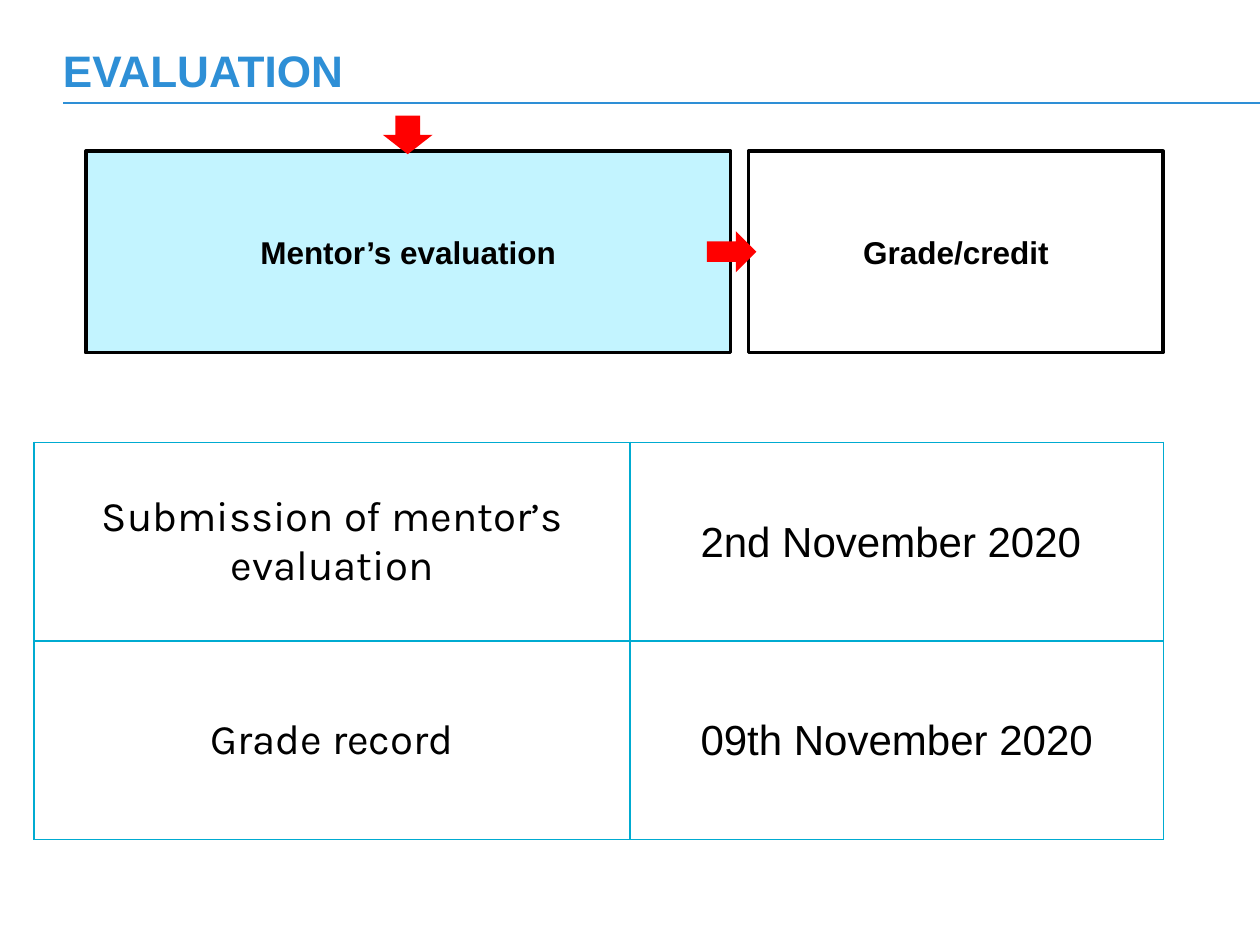
from typing import NamedTuple

import pptx
import pptx.dml.color
import pptx.enum.shapes
import pptx.enum.text
import pptx.oxml
import pptx.oxml.ns
import pptx.util
from lxml import etree

Cm = pptx.util.Cm
Pt = pptx.util.Pt
RGBColor = pptx.dml.color.RGBColor
MSO_SHAPE = pptx.enum.shapes.MSO_SHAPE
PP_ALIGN = pptx.enum.text.PP_ALIGN
MSO_ANCHOR = pptx.enum.text.MSO_ANCHOR
qn = pptx.oxml.ns.qn

BLUE = RGBColor(0x2E, 0x8F, 0xD6)
PALE_CYAN = RGBColor(0xC3, 0xF4, 0xFF)
TEAL = RGBColor(0x00, 0xAB, 0xD1)
RED = RGBColor(0xFF, 0x00, 0x00)
BLACK = RGBColor(0x00, 0x00, 0x00)
WHITE = RGBColor(0xFF, 0xFF, 0xFF)


class Step(NamedTuple):
    text: str
    left: float
    width: float
    fill: RGBColor


class Arrow(NamedTuple):
    kind: MSO_SHAPE
    left: float
    top: float
    width: float
    height: float


STEP_TOP, STEP_HEIGHT = 3.05, 4.06
STEPS = [
    Step("Mentor’s evaluation", 1.73, 13.0, PALE_CYAN),
    Step("Grade/credit", 15.09, 8.36, WHITE),
]
ARROWS = [
    Arrow(MSO_SHAPE.RIGHT_ARROW, 14.25, 4.66, 1.0, 0.83),
    Arrow(MSO_SHAPE.DOWN_ARROW, 7.72, 2.33, 1.0, 0.78),
]
TABLE_LEFT, TABLE_TOP, ROW_HEIGHT = 0.69, 8.92, 4.0
COLUMN_WIDTHS = [12.01, 10.75]
COLUMN_FONTS = ["Karla", "Arial"]
# The trailing space keeps both dates starting at the same place.
DEADLINES = [
    ("Submission of mentor’s evaluation", "2nd November 2020 "),
    ("Grade record", "09th November 2020"),
]


def write(tf, text: str, size: float, font: str, color: RGBColor,
          bold: bool = False, align: PP_ALIGN = PP_ALIGN.CENTER) -> None:
    tf.text = text
    tf.word_wrap = True
    p = tf.paragraphs[0]
    p.alignment = align
    r = p.runs[0]
    r.font.size = Pt(size)
    r.font.name = font
    r.font.bold = bold
    r.font.color.rgb = color


def add_title(s, text: str) -> None:
    left = Cm(1.27)
    rule = s.shapes.add_connector(
        pptx.enum.shapes.MSO_CONNECTOR.STRAIGHT, left, Cm(2.08), Cm(25.4), Cm(2.08))
    rule.line.color.rgb = BLUE
    rule.line.width = Pt(1.5)
    etree.SubElement(rule._element.spPr, qn("a:effectLst"))

    sp = s.shapes.add_textbox(left, Cm(1.02), Cm(22.86), Cm(0.79))
    tf = sp.text_frame
    tf.margin_left = tf.margin_top = tf.margin_right = tf.margin_bottom = 0
    tf.vertical_anchor = MSO_ANCHOR.MIDDLE
    write(tf, text, 25.2, "Arial", BLUE, bold=True, align=PP_ALIGN.LEFT)


def add_step(s, step: Step) -> None:
    sp = s.shapes.add_shape(MSO_SHAPE.RECTANGLE, Cm(step.left), Cm(STEP_TOP),
                            Cm(step.width), Cm(STEP_HEIGHT))
    sp.shadow.inherit = False
    sp.fill.solid()
    sp.fill.fore_color.rgb = step.fill
    sp.line.color.rgb = BLACK
    sp.line.width = Pt(2)
    sp.text_frame.vertical_anchor = MSO_ANCHOR.MIDDLE
    write(sp.text_frame, step.text, 18, "Arial", BLACK, bold=True)


def add_arrow(s, arrow: Arrow) -> None:
    sp = s.shapes.add_shape(arrow.kind, Cm(arrow.left), Cm(arrow.top),
                            Cm(arrow.width), Cm(arrow.height))
    sp.shadow.inherit = False
    sp.fill.solid()
    sp.fill.fore_color.rgb = RED
    sp.line.fill.background()


def set_borders(cell, color: RGBColor, width: float) -> None:
    """Line all four sides; border elements must precede the cell's fill."""
    tcPr = cell._tc.get_or_add_tcPr()
    for i, side in enumerate(("a:lnL", "a:lnR", "a:lnT", "a:lnB")):
        ln = etree.Element(qn(side), w=str(Pt(width)))
        fill = etree.SubElement(ln, qn("a:solidFill"))
        etree.SubElement(fill, qn("a:srgbClr"), val=str(color))
        tcPr.insert(i, ln)


def add_deadlines(s) -> None:
    table = s.shapes.add_table(
        len(DEADLINES), len(COLUMN_WIDTHS), Cm(TABLE_LEFT), Cm(TABLE_TOP),
        Cm(sum(COLUMN_WIDTHS)), Cm(ROW_HEIGHT * len(DEADLINES))).table
    table.first_row = table.horz_banding = False
    for column, width in zip(table.columns, COLUMN_WIDTHS):
        column.width = Cm(width)
    for i, texts in enumerate(DEADLINES):
        table.rows[i].height = Cm(ROW_HEIGHT)
        for j, (text, font) in enumerate(zip(texts, COLUMN_FONTS)):
            cell = table.cell(i, j)
            cell.fill.solid()
            cell.fill.fore_color.rgb = WHITE
            cell.margin_left = cell.margin_top = cell.margin_right = Cm(0.03)
            cell.margin_bottom = 0
            cell.vertical_anchor = MSO_ANCHOR.MIDDLE
            write(cell.text_frame, text, 24, font, BLACK)
            set_borders(cell, TEAL, 1)


def main() -> None:
    prs = pptx.Presentation()
    prs.slide_width, prs.slide_height = Cm(25.4), Cm(19.05)
    s = prs.slides.add_slide(prs.slide_layouts[6])
    add_title(s, "EVALUATION")
    for step in STEPS:
        add_step(s, step)
    for arrow in ARROWS:
        add_arrow(s, arrow)
    add_deadlines(s)
    prs.save("out.pptx")


if __name__ == "__main__":
    main()
